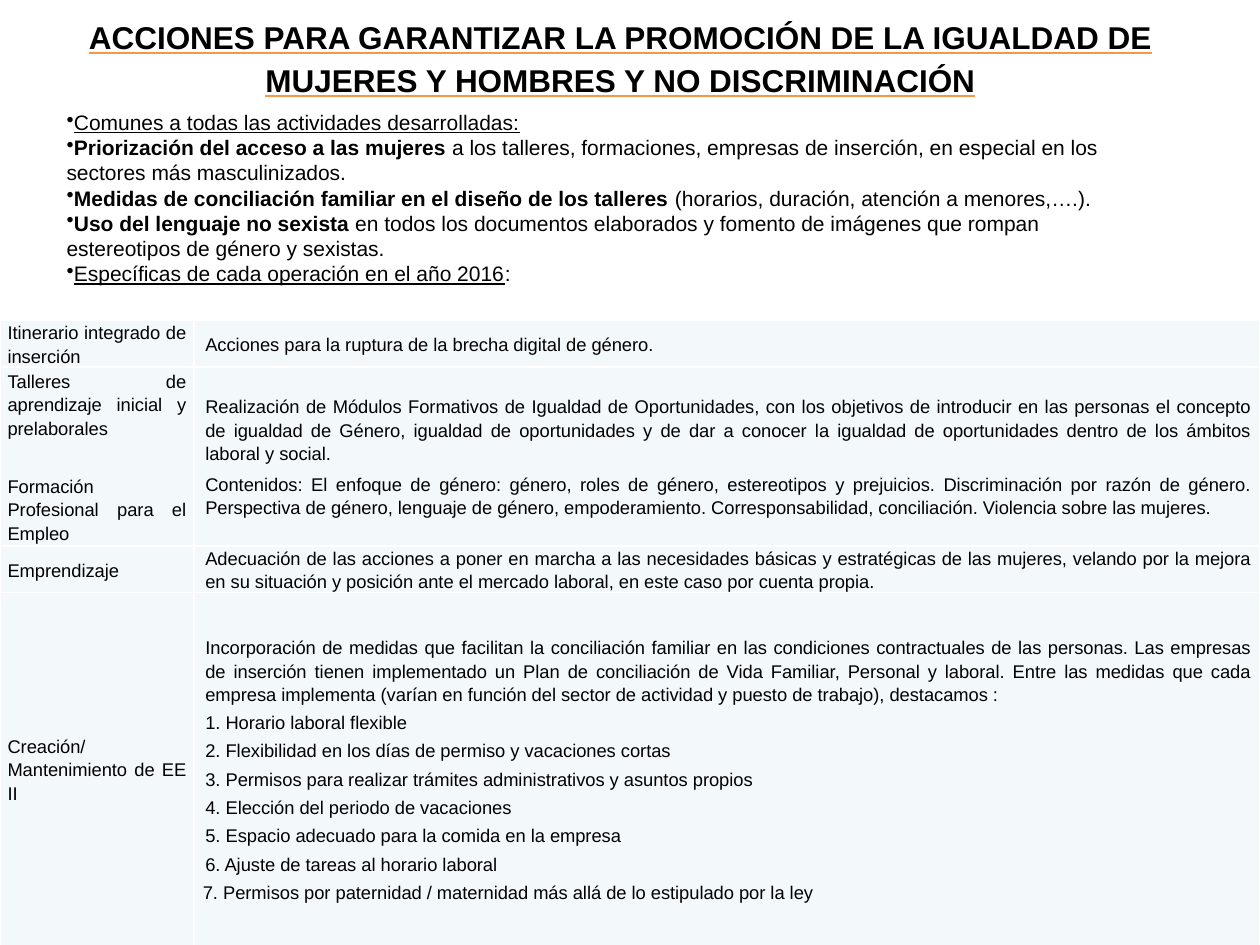
from lxml import etree
from pptx import Presentation
from pptx import util as u
from pptx.dml.color import RGBColor
from pptx.enum import shapes, text
from pptx.oxml import parse_xml
from pptx.oxml.ns import nsdecls, qn

BLACK = RGBColor(0x00, 0x00, 0x00)
WHITE = RGBColor(0xFF, 0xFF, 0xFF)
PALE = RGBColor(0xF3, 0xF9, 0xFA)
ORANGE = RGBColor(0xF7, 0x96, 0x46)

LEFT, CENTER, JUSTIFY = text.PP_ALIGN.LEFT, text.PP_ALIGN.CENTER, text.PP_ALIGN.JUSTIFY

TITLE = ("ACCIONES PARA GARANTIZAR LA PROMOCIÓN DE LA IGUALDAD DE MUJERES Y HOMBRES "
         "Y NO DISCRIMINACIÓN")

# Each measure: emphasised start, style of the start, plain rest
MEASURES = [
    ("Comunes a todas las actividades desarrolladas:", "underline", ""),
    ("Priorización del acceso a las mujeres", "bold",
     " a los talleres, formaciones, empresas de inserción, en especial en los sectores "
     "más masculinizados."),
    ("Medidas de conciliación familiar en el diseño de los talleres", "bold",
     " (horarios, duración, atención a menores,….)."),
    ("Uso del lenguaje no sexista", "bold",
     " en todos los documentos elaborados y fomento de imágenes que rompan estereotipos "
     "de género y sexistas."),
    ("Específicas de cada operación en el año 2016", "underline", ":"),
]

# Each operation: row height, name paragraphs, action paragraphs,
# alignment of the actions, space before and after them
OPERATIONS = [
    (0.37, ["Itinerario integrado de inserción"],
     ["Acciones para la ruptura de la brecha digital de género."], LEFT, 0, 0),
    (1.42, ["Talleres de aprendizaje inicial y prelaborales",
            "Formación Profesional para el Empleo"],
     ["Realización de Módulos Formativos de Igualdad de Oportunidades, con los objetivos "
      "de introducir en las personas el concepto de igualdad de Género, igualdad de "
      "oportunidades y de dar a conocer la igualdad de oportunidades dentro de los "
      "ámbitos laboral y social.",
      "Contenidos: El enfoque de género: género, roles de género, estereotipos y "
      "prejuicios. Discriminación por razón de género. Perspectiva de género, lenguaje de "
      "género, empoderamiento. Corresponsabilidad, conciliación. Violencia sobre las "
      "mujeres."], JUSTIFY, 1.4, 2.9),
    (0.37, ["Emprendizaje"],
     ["Adecuación de las acciones a poner en marcha a las necesidades básicas y "
      "estratégicas de las mujeres, velando por la mejora en su situación y posición ante "
      "el mercado laboral, en este caso por cuenta propia."], JUSTIFY, 0, 3),
    (2.8, ["Creación/Mantenimiento de EE II"],
     ["Incorporación de medidas que facilitan la conciliación familiar en las condiciones "
      "contractuales de las personas. Las empresas de inserción tienen implementado un "
      "Plan de conciliación de Vida Familiar, Personal y laboral. Entre las medidas que "
      "cada empresa implementa (varían en función del sector de actividad y puesto de "
      "trabajo), destacamos :",
      "1. Horario laboral flexible",
      "2. Flexibilidad en los días de permiso y vacaciones cortas",
      "3. Permisos para realizar trámites administrativos y asuntos propios",
      "4. Elección del periodo de vacaciones",
      "5. Espacio adecuado para la comida en la empresa",
      "6. Ajuste de tareas al horario laboral",
      "7. Permisos por paternidad / maternidad más allá de lo estipulado por la ley"],
     JUSTIFY, 1.4, 1.4),
]


class SlideBuilder:
    font_name = "Arial"
    line_spacing = 1.15
    table_size = 10.5

    def __init__(self, slide):
        self.slide = slide

    def style(self, font, size, bold=False, underline=False):
        font.name, font.size = self.font_name, u.Pt(size)
        font.bold, font.underline = bold, underline
        font.color.rgb = BLACK

    def title(self, wording, left, top, width, height):
        heading = self.slide.shapes.title
        heading.left, heading.top = u.Inches(left), u.Inches(top)
        heading.width, heading.height = u.Inches(width), u.Inches(height)
        frame = heading.text_frame
        frame.text = wording
        frame.word_wrap = True
        frame.auto_size = text.MSO_AUTO_SIZE.NONE
        frame.vertical_anchor = text.MSO_ANCHOR.MIDDLE
        paragraph = frame.paragraphs[0]
        paragraph.alignment = CENTER
        paragraph.line_spacing = self.line_spacing
        paragraph.space_before = u.Pt(0)
        run = paragraph.runs[0]
        self.style(run.font, 18, bold=True, underline=True)
        # The underline has its own colour
        run.font._element.find(qn("a:solidFill")).addnext(parse_xml(
            f'<a:uFill {nsdecls("a")}><a:solidFill><a:srgbClr val="{ORANGE}"/>'
            '</a:solidFill></a:uFill>'))

    def bullet_panel(self, items, left, top, width, height):
        panel = self.slide.shapes.add_shape(
            shapes.MSO_SHAPE.RECTANGLE, u.Inches(left), u.Inches(top),
            u.Inches(width), u.Inches(height))
        panel.shadow.inherit = False
        panel.fill.solid()
        panel.fill.fore_color.rgb = WHITE
        panel.line.fill.background()
        frame = panel.text_frame
        frame.word_wrap = True
        frame.vertical_anchor = text.MSO_ANCHOR.TOP
        frame.text = "\n".join(start for start, _, _ in items)
        for paragraph, (_, emphasis, rest) in zip(frame.paragraphs, items):
            etree.SubElement(paragraph._p.get_or_add_pPr(), qn("a:buChar"), char="•")
            paragraph.alignment = LEFT
            self.style(paragraph.runs[0].font, 12, **{emphasis: True})
            if rest:
                run = paragraph.add_run()
                run.text = rest
                self.style(run.font, 12)

    def cell(self, cell, lines, align, before, after, indent=0):
        cell.fill.solid()
        cell.fill.fore_color.rgb = PALE
        cell.vertical_anchor = text.MSO_ANCHOR.MIDDLE
        cell.margin_left = cell.margin_right = u.Inches(0.06)
        cell.margin_top = cell.margin_bottom = 0
        cell.text_frame.text = "\n".join(lines)
        for index, paragraph in enumerate(cell.text_frame.paragraphs):
            paragraph.alignment = align
            paragraph.line_spacing = self.line_spacing
            paragraph.space_before = u.Pt(before if index else 0)
            paragraph.space_after = u.Pt(after)
            paragraph._p.get_or_add_pPr().set("marL", str(u.Inches(indent)))
            self.style(paragraph.runs[0].font, self.table_size)
        self.borders(cell)

    def borders(self, cell):
        properties = cell._tc.get_or_add_tcPr()
        for index, side in enumerate(("lnL", "lnR", "lnT", "lnB")):
            properties.insert(index, parse_xml(
                f'<a:{side} {nsdecls("a")} w="{u.Pt(1)}"><a:solidFill>'
                f'<a:srgbClr val="{WHITE}"/></a:solidFill></a:{side}>'))

    def operations_table(self, operations, left, top, widths):
        heights = [operation[0] for operation in operations]
        table = self.slide.shapes.add_table(
            len(operations), len(widths), u.Inches(left), u.Inches(top),
            u.Inches(sum(widths)), u.Inches(sum(heights))).table
        table.first_row = table.horz_banding = False
        for column, width in zip(table.columns, widths):
            column.width = u.Inches(width)
        for row, (height, names, actions, align, before, after) in zip(table.rows, operations):
            row.height = u.Inches(height)
            name_cell, action_cell = row.cells
            self.cell(name_cell, names, JUSTIFY, 0, 3)
            self.cell(action_cell, actions, align, before, after, indent=0.03)
        return table


def main():
    deck = Presentation()
    deck.slide_width, deck.slide_height = u.Inches(10), u.Inches(7.5)
    builder = SlideBuilder(deck.slides.add_slide(deck.slide_layouts[5]))

    # Heading and common measures
    builder.title(TITLE, 0.12, 0.04, 9.61, 0.8)
    builder.bullet_panel(MEASURES, 0.43, 0.82, 8.5, 1.72)

    # Actions of each operation
    table = builder.operations_table(OPERATIONS, 0, 2.54, [1.54, 8.46])

    # The two kinds of training are set apart; the last item hangs slightly
    table.cell(1, 0).text_frame.paragraphs[0].space_after = u.Pt(19.7)
    last_item = table.cell(3, 1).text_frame.paragraphs[-1]._p.get_or_add_pPr()
    last_item.set("marL", str(u.Inches(0.02)))
    last_item.set("indent", str(u.Inches(-0.01)))

    deck.save("out.pptx")


if __name__ == "__main__":
    main()
